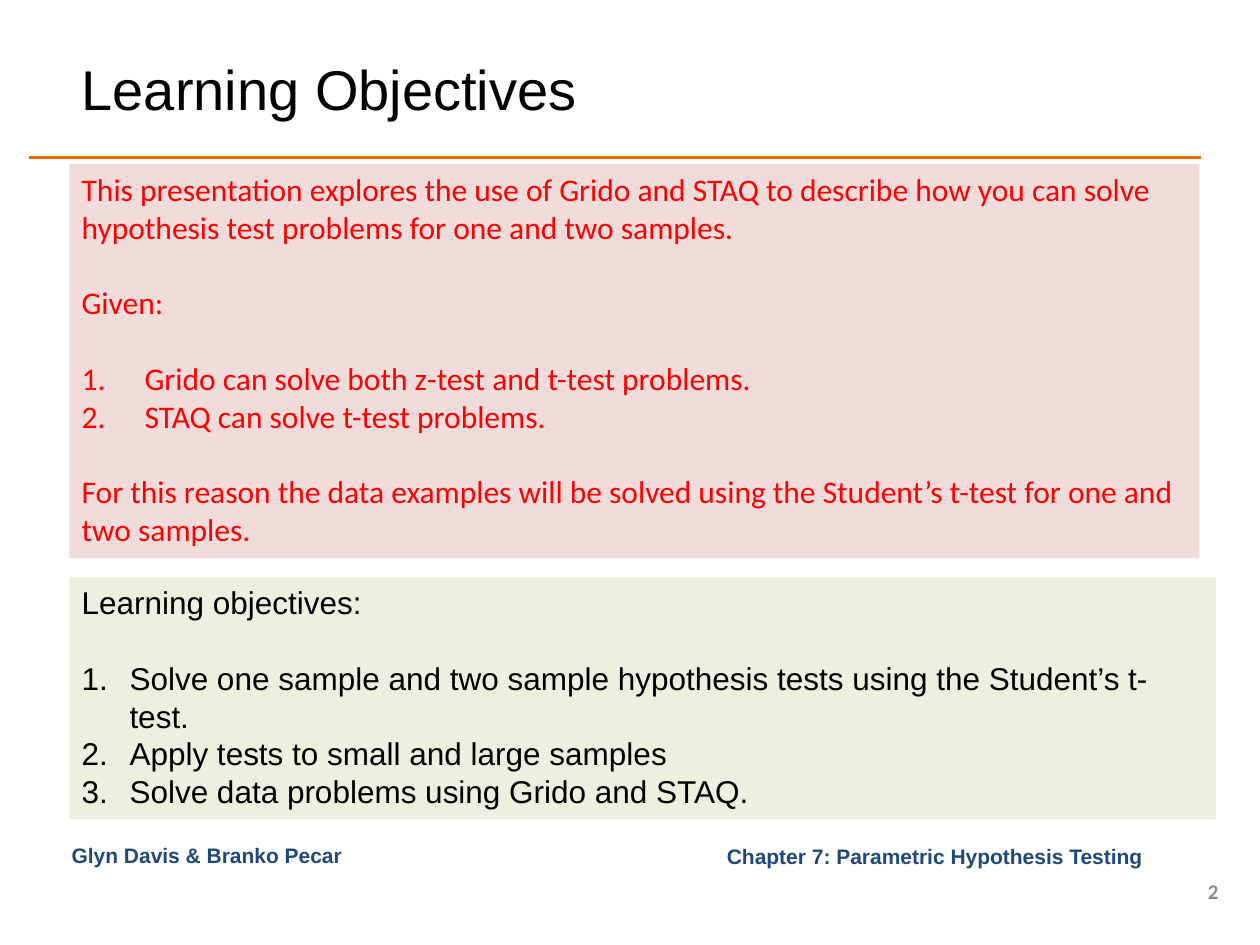
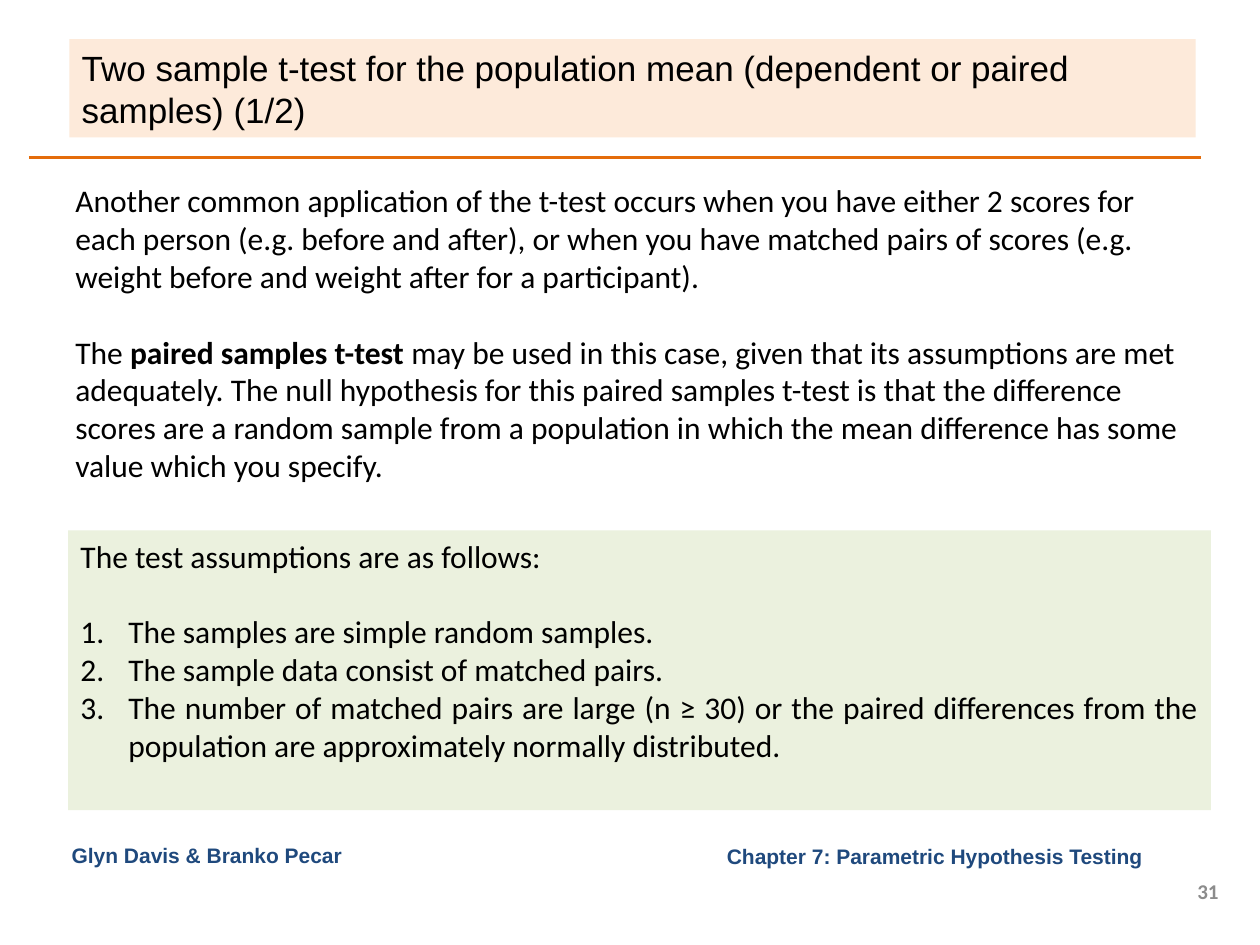
from pptx import Presentation
from pptx.dml.color import RGBColor
from pptx.enum.shapes import MSO_CONNECTOR
from pptx.enum.text import MSO_ANCHOR, PP_ALIGN
from pptx.oxml.ns import qn
from pptx.util import Pt
from lxml import etree

PX = 9144  # EMU in one px, 100 px to the inch
LEFT, RIGHT, JUST = PP_ALIGN.LEFT, PP_ALIGN.RIGHT, PP_ALIGN.JUSTIFY
TOP, MID = MSO_ANCHOR.TOP, MSO_ANCHOR.MIDDLE
LINE = MSO_CONNECTOR.STRAIGHT
SANS, BODY = "Arial", "Calibri"
BLACK, RED, NAVY, GREY = "000000", "FF0000", "1F497D", "8C8C8C"
ORANGE, PINK, GREEN, PEACH = "E46C0A", "F2DCDB", "EBF1DE", "FDEADA"
LEAD = 1.2  # line height as a share of the text size


def color(code):
    return RGBColor.from_string(code)


class Deck:
    def __init__(self):
        self.prs = Presentation()
        self.prs.slide_width, self.prs.slide_height = 1000 * PX, 750 * PX
        self.slide = None

    def page(self, num):
        """Start a slide with the rule, footers and slide number."""
        self.slide = self.prs.slides.add_slide(self.prs.slide_layouts[6])
        self.rule(23, 125, 953)
        foot = dict(size=12, bold=True, ink=NAVY)
        self.text((375, 664, 542, 31), ["Chapter 7: Parametric Hypothesis Testing"],
                  align=RIGHT, anchor=MID, **foot)
        self.text((47, 664, 297, 31), ["Glyn Davis & Branko Pecar"], **foot)
        self.text((930, 695, 47, 24), [str(num)], font=BODY, align=RIGHT,
                  anchor=MID, **{**foot, "ink": GREY})

    def rule(self, left, top, right):
        line = self.slide.shapes.add_connector(
            LINE, left * PX, top * PX, right * PX, top * PX)
        line.line.color.rgb = color(ORANGE)
        line.line.width = Pt(2)
        etree.SubElement(line._element.spPr, qn("a:effectLst"))

    def title(self, text, wide, size, fill=None):
        self.text((55, 31, wide, 78), [text], size=size, anchor=MID, fill=fill)

    def text(self, area, groups, size=18, font=SANS, ink=BLACK, bold=False,
             align=LEFT, anchor=TOP, fill=None, hang=38):
        """Write groups one line apart: a string is a paragraph, a tuple a
        numbered list; words between asterisks are bold."""
        box = self.slide.shapes.add_textbox(*(n * PX for n in area))
        if fill:
            box.fill.solid()
            box.fill.fore_color.rgb = color(fill)
        frame = box.text_frame
        frame.word_wrap = True
        frame.vertical_anchor = anchor
        para = None
        for group in groups:
            listed = isinstance(group, tuple)
            for i, line in enumerate(group if listed else [group]):
                first = para is None
                para = frame.paragraphs[0] if first else frame.add_paragraph()
                if listed:
                    self.number(para, hang)
                para.alignment = align
                para.line_spacing = Pt(size * LEAD)
                if i == 0 and not first:
                    para.space_before = Pt(size * LEAD)
                for j, part in enumerate(line.split("*")):
                    run = para.add_run()
                    run.text = part
                    run.font.size = Pt(size)
                    run.font.name = font
                    run.font.bold = bold or j % 2 == 1
                    run.font.color.rgb = color(ink)

    def number(self, para, hang):
        props = para._p.get_or_add_pPr()
        props.set("marL", str(hang * PX))
        props.set("indent", str(-hang * PX))
        etree.SubElement(props, qn("a:buAutoNum"), type="arabicPeriod")


def goals(deck):
    deck.page(2)
    deck.title("Learning Objectives", 758, 32)
    deck.text((55, 130, 897, 313), [
        "This presentation explores the use of Grido and STAQ to describe how "
        "you can solve hypothesis test problems for one and two samples.",
        "Given:",
        ("Grido can solve both z-test and t-test problems.",
         "STAQ can solve t-test problems."),
        "For this reason the data examples will be solved using the "
        "Student’s t-test for one and two samples.",
    ], font=BODY, ink=RED, fill=PINK, hang=50)
    deck.text((55, 458, 910, 192), [
        "Learning objectives:",
        ("Solve one sample and two sample hypothesis tests using the "
         "Student’s t-test.",
         "Apply tests to small and large samples",
         "Solve data problems using Grido and STAQ."),
    ], fill=GREEN)


def paired(deck):
    deck.page(31)
    deck.title("Two sample t-test for the population mean (dependent or paired "
               "samples) (1/2)", 894, 20, PEACH)
    deck.text((50, 139, 907, 252), [
        "Another common application of the t-test occurs when you have either "
        "2 scores for each person (e.g. before and after), or when you have "
        "matched pairs of scores (e.g. weight before and weight after for a "
        "participant).",
        "The *paired samples t-test* may be used in this case, given that its "
        "assumptions are met adequately. The null hypothesis for this paired "
        "samples t-test is that the difference scores are a random sample from "
        "a population in which the mean difference has some value which you "
        "specify.",
    ], font=BODY)
    deck.text((54, 421, 907, 222), [
        "The test assumptions are as follows:",
        ("The samples are simple random samples.",
         "The sample data consist of matched pairs.",
         "The number of matched pairs are large (n ≥ 30) or the paired "
         "differences from the population are approximately normally "
         "distributed."),
    ], font=BODY, align=JUST, fill=GREEN)


def main():
    deck = Deck()
    goals(deck)
    paired(deck)
    deck.prs.save("out.pptx")


if __name__ == "__main__":
    main()
